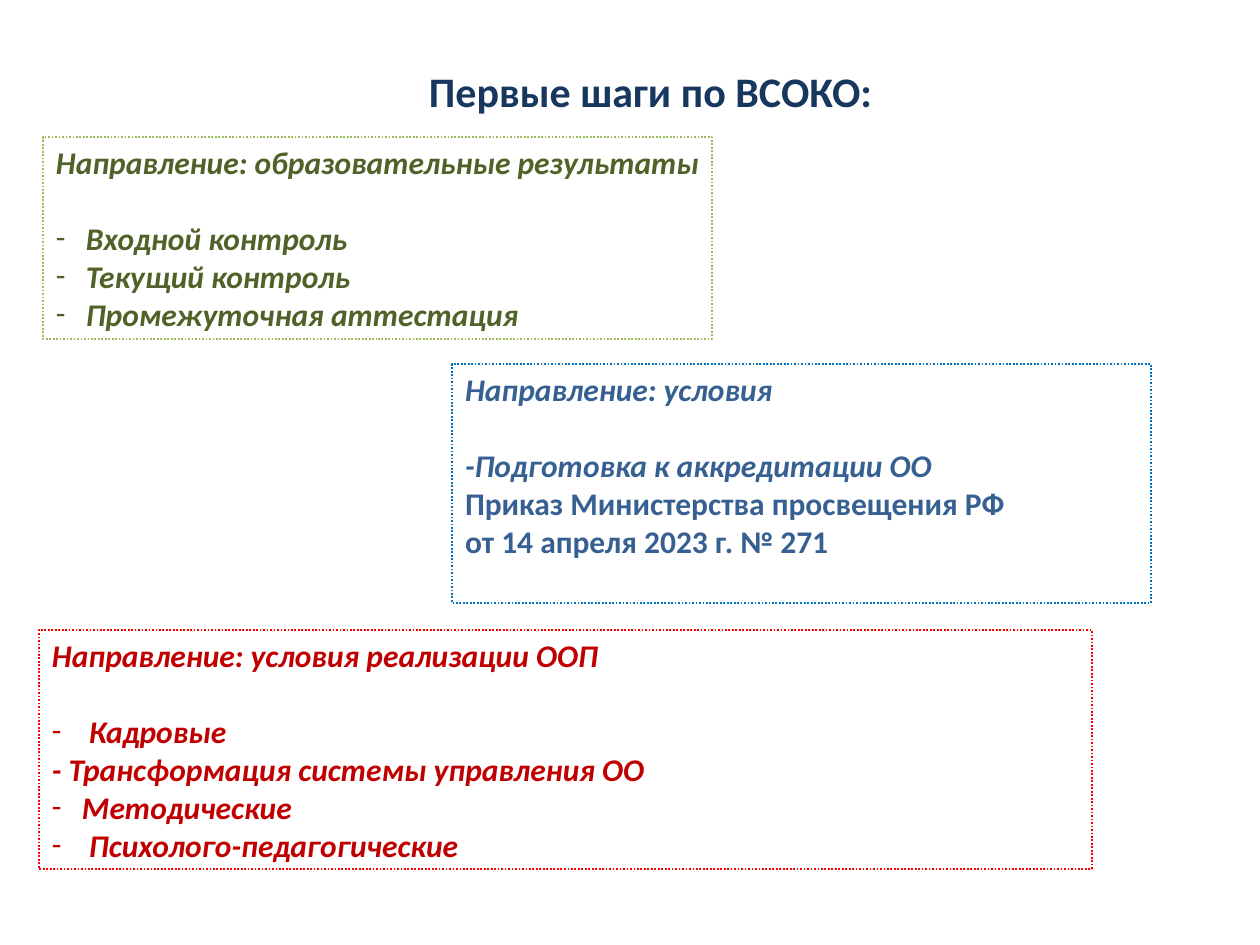
from lxml.etree import SubElement
from pptx import Presentation
from pptx.dml.color import RGBColor
from pptx.enum.dml import MSO_LINE
from pptx.enum.shapes import MSO_SHAPE
from pptx.enum.text import MSO_ANCHOR, MSO_AUTO_SIZE, PP_ALIGN
from pptx.oxml.ns import qn
from pptx.util import Pt

EMU_PER_PX = 914400 / 126
SLIDE_SIZE = (1260, 945)

THEME = {
    "font": "Calibri",
    "title_size": 24,
    "body_size": 18,
    "heading_gap": 22,
    "line_width": 1,
    "title": "17375E",
    "paper": "FFFFFF",
    "green": {"line": "9BBB59", "text": "4F6228"},
    "blue": {"line": "0070C0", "text": "376092"},
    "red": {"line": "FF0000", "text": "C00000"},
}

TITLE = ("Первые шаги по ВСОКО:", (416, 59, 478, 63))

# Hanging indents of dashed items, in px
NEAR, FAR = 30, 37

# Items are (text, hanging indent or None for no dash, italic)
DIRECTIONS = [
    {
        "colors": "green", "box": (43, 137, 669, 202), "wrap": False,
        "heading": "Направление: образовательные результаты",
        "items": [
            ("Входной контроль", NEAR, True),
            ("Текущий контроль", NEAR, True),
            ("Промежуточная аттестация", NEAR, True),
        ],
    },
    {
        "colors": "blue", "box": (452, 364, 699, 239), "wrap": True,
        "heading": "Направление: условия",
        "items": [
            ("-Подготовка к аккредитации ОО", None, True),
            ("Приказ Министерства просвещения РФ", None, False),
            ("от 14 апреля 2023 г. № 271", None, False),
        ],
    },
    {
        "colors": "red", "box": (39, 630, 1053, 239), "wrap": True,
        "heading": "Направление: условия реализации ООП",
        "items": [
            ("Кадровые", FAR, True),
            ("- Трансформация системы управления ОО", None, True),
            ("Методические", NEAR, True),
            ("Психолого-педагогические", FAR, True),
        ],
    },
]


def px(value):
    return round(value * EMU_PER_PX)


def rgb(value):
    return RGBColor.from_string(value)


def set_all(target, values):
    for name, value in values.items():
        setattr(target, name, value)


def set_frame(frame, wrap, anchor):
    set_all(frame, {
        "word_wrap": wrap, "auto_size": MSO_AUTO_SIZE.NONE,
        "vertical_anchor": anchor,
        "margin_left": px(13), "margin_right": px(13),
        "margin_top": px(6), "margin_bottom": px(6),
    })


def write(paragraph, text, size, color, italic=False):
    paragraph.alignment = PP_ALIGN.LEFT
    run = paragraph.add_run()
    run.text = text
    set_all(run.font, {"name": THEME["font"], "size": Pt(size),
                       "bold": True, "italic": italic})
    run.font.color.rgb = rgb(color)


def add_dash(paragraph, indent, color):
    properties = paragraph._p.get_or_add_pPr()
    properties.set("marL", str(px(indent)))
    properties.set("indent", str(-px(indent)))
    bullet_color = SubElement(properties, qn("a:buClr"))
    SubElement(bullet_color, qn("a:srgbClr"), val=color)
    SubElement(properties, qn("a:buFont"), typeface=THEME["font"])
    SubElement(properties, qn("a:buChar"), char="-")


def add_title(slide):
    text, box = TITLE
    title = slide.shapes.title
    set_all(title, dict(zip(("left", "top", "width", "height"), map(px, box))))
    set_frame(title.text_frame, False, MSO_ANCHOR.TOP)
    write(title.text_frame.paragraphs[0], text, THEME["title_size"], THEME["title"])


def add_direction(slide, direction):
    colors = THEME[direction["colors"]]
    shape = slide.shapes.add_shape(MSO_SHAPE.RECTANGLE, *map(px, direction["box"]))
    shape.shadow.inherit = False
    shape.fill.solid()
    shape.fill.fore_color.rgb = rgb(THEME["paper"])
    shape.line.color.rgb = rgb(colors["line"])
    set_all(shape.line, {"width": Pt(THEME["line_width"]),
                         "dash_style": MSO_LINE.ROUND_DOT})

    frame = shape.text_frame
    set_frame(frame, direction["wrap"], MSO_ANCHOR.TOP)
    heading = frame.paragraphs[0]
    write(heading, direction["heading"], THEME["body_size"], colors["text"], True)
    heading.space_after = Pt(THEME["heading_gap"])
    for text, indent, italic in direction["items"]:
        paragraph = frame.add_paragraph()
        write(paragraph, text, THEME["body_size"], colors["text"], italic)
        if indent:
            add_dash(paragraph, indent, colors["text"])


def main():
    presentation = Presentation()
    presentation.slide_width, presentation.slide_height = map(px, SLIDE_SIZE)
    slide = presentation.slides.add_slide(presentation.slide_layouts[5])
    add_title(slide)
    for direction in DIRECTIONS:
        add_direction(slide, direction)
    presentation.save("out.pptx")


if __name__ == "__main__":
    main()
